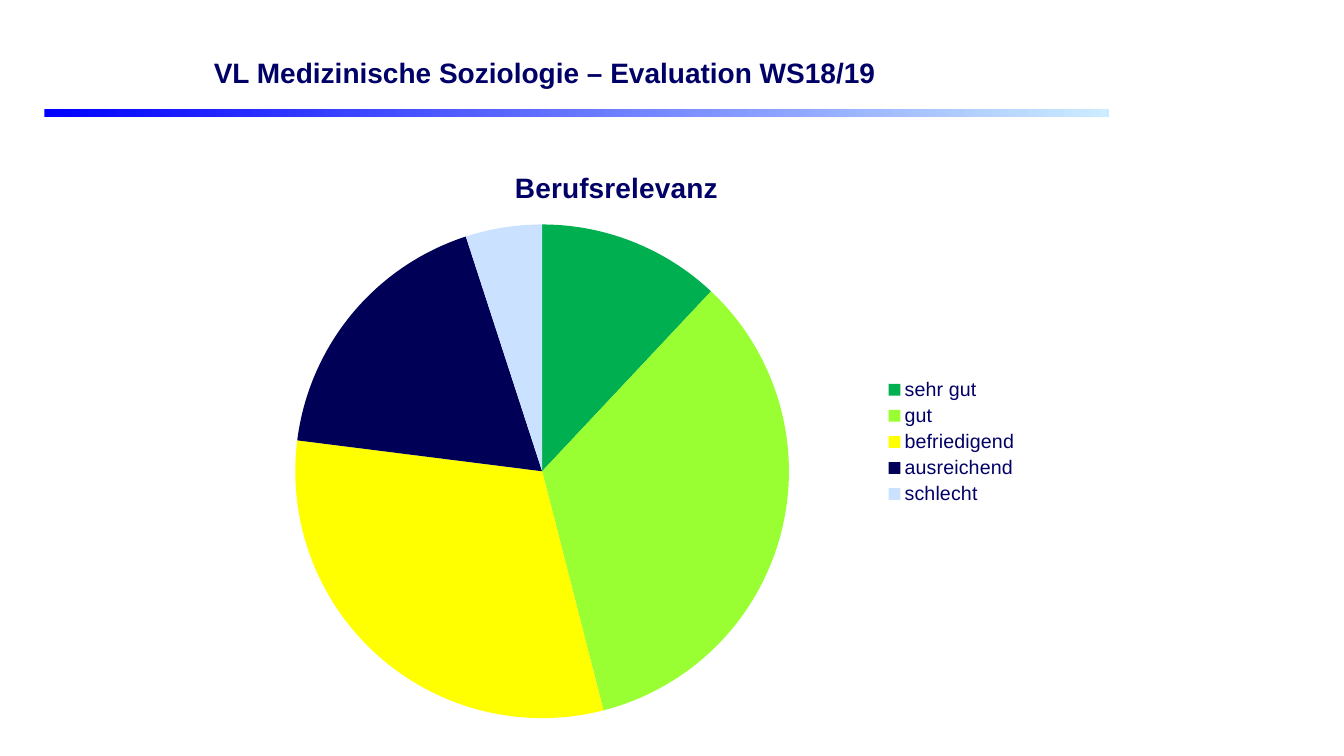
"""Build the evaluation slide with the pie chart on professional relevance."""
from dataclasses import dataclass

from lxml.etree import SubElement
from pptx import Presentation
from pptx.chart.chart import Chart
from pptx.chart.data import CategoryChartData
from pptx.dml.color import RGBColor
from pptx.enum.chart import XL_CHART_TYPE, XL_LEGEND_POSITION
from pptx.enum.shapes import MSO_SHAPE
from pptx.enum.text import MSO_ANCHOR, PP_ALIGN
from pptx.oxml.ns import qn
from pptx.slide import Slide
from pptx.text.text import Font
from pptx.util import Pt


@dataclass(frozen=True)
class Theme:
    font: str = "Arial"
    ink: str = "000066"
    paper: str = "FFFFFF"
    rule_start: str = "0000FF"
    rule_end: str = "CCECFF"
    heading_size: int = 20
    legend_size: int = 14
    chart_size: int = 10


@dataclass(frozen=True)
class Box:
    left: float
    top: float
    width: float
    height: float

    def lengths(self) -> tuple[Pt, Pt, Pt, Pt]:
        return Pt(self.left), Pt(self.top), Pt(self.width), Pt(self.height)


@dataclass(frozen=True)
class Grade:
    label: str
    share: int
    color: str


THEME = Theme()
HEADING = "VL Medizinische Soziologie – Evaluation WS18/19"
TOPIC = "Berufsrelevanz"
GRADES = (
    Grade("sehr gut", 12, "00B050"),
    Grade("gut", 34, "99FF33"),
    Grade("befriedigend", 31, "FFFF00"),
    Grade("ausreichend", 18, "000056"),
    Grade("schlecht", 5, "CAE2FF"),
)
HEADING_BOX = Box(145.5, 26, 527, 51)
RULE_BOX = Box(31.7, 77.8, 760.3, 6)
CHART_BOX = Box(145.5, 105.8, 589.7, 419.8)
PIE_LAYOUT = {"x": 0.11, "y": 0.13, "w": 0.6, "h": 0.84}


def style_font(font: Font, size: int, bold: bool = False) -> None:
    font.name = THEME.font
    font.size = Pt(size)
    font.bold = bold
    font.color.rgb = RGBColor.from_string(THEME.ink)


def add_rule(slide: Slide) -> None:
    rule = slide.shapes.add_shape(MSO_SHAPE.RECTANGLE, *RULE_BOX.lengths())
    rule.shadow.inherit = False
    rule.line.fill.background()
    rule.fill.gradient()
    rule.fill.gradient_angle = 0
    colors = (THEME.rule_start, THEME.rule_end)
    for position, (stop, color) in enumerate(zip(rule.fill.gradient_stops, colors)):
        stop.position = position
        stop.color.rgb = RGBColor.from_string(color)


def set_heading(slide: Slide) -> None:
    heading = slide.shapes.title
    heading.left, heading.top, heading.width, heading.height = HEADING_BOX.lengths()
    heading.fill.solid()
    heading.fill.fore_color.rgb = RGBColor.from_string(THEME.paper)
    frame = heading.text_frame
    frame.text = HEADING
    frame.word_wrap = True
    frame.vertical_anchor = MSO_ANCHOR.MIDDLE
    paragraph = frame.paragraphs[0]
    paragraph.alignment = PP_ALIGN.LEFT
    style_font(paragraph.runs[0].font, THEME.heading_size, bold=True)


def place_pie(chart: Chart) -> None:
    plot_area = chart.plots[0]._element.getparent()
    layout = plot_area.find(qn("c:layout"))
    if layout is None:
        layout = SubElement(plot_area, qn("c:layout"))
        plot_area.insert(0, layout)
    manual = SubElement(layout, qn("c:manualLayout"))
    settings = {"layoutTarget": "inner", "xMode": "edge", "yMode": "edge", **PIE_LAYOUT}
    for tag, value in settings.items():
        SubElement(manual, qn(f"c:{tag}")).set("val", str(value))


def add_grades_chart(slide: Slide) -> None:
    grades_data = CategoryChartData()
    grades_data.categories = [grade.label for grade in GRADES]
    grades_data.add_series(TOPIC, [grade.share for grade in GRADES])
    chart = slide.shapes.add_chart(
        XL_CHART_TYPE.PIE, *CHART_BOX.lengths(), grades_data
    ).chart
    style_font(chart.font, THEME.chart_size)
    chart.has_title = True
    chart.chart_title.text_frame.text = TOPIC
    topic = chart.chart_title.text_frame.paragraphs[0].runs[0]
    style_font(topic.font, THEME.heading_size, bold=True)
    chart.has_legend = True
    chart.legend.position = XL_LEGEND_POSITION.RIGHT
    chart.legend.include_in_layout = False
    style_font(chart.legend.font, THEME.legend_size)
    pie = chart.plots[0]
    pie.vary_by_categories = True
    for index, grade in enumerate(GRADES):
        wedge = pie.series[0].points[index].format
        wedge.fill.solid()
        wedge.fill.fore_color.rgb = RGBColor.from_string(grade.color)
        wedge.line.fill.background()
    place_pie(chart)


def main() -> None:
    deck = Presentation()
    deck.slide_width, deck.slide_height = Pt(960), Pt(540)
    slide = deck.slides.add_slide(deck.slide_layouts[5])
    slide.background.fill.solid()
    slide.background.fill.fore_color.rgb = RGBColor.from_string(THEME.paper)
    add_rule(slide)
    set_heading(slide)
    add_grades_chart(slide)
    deck.save("out.pptx")


if __name__ == "__main__":
    main()
